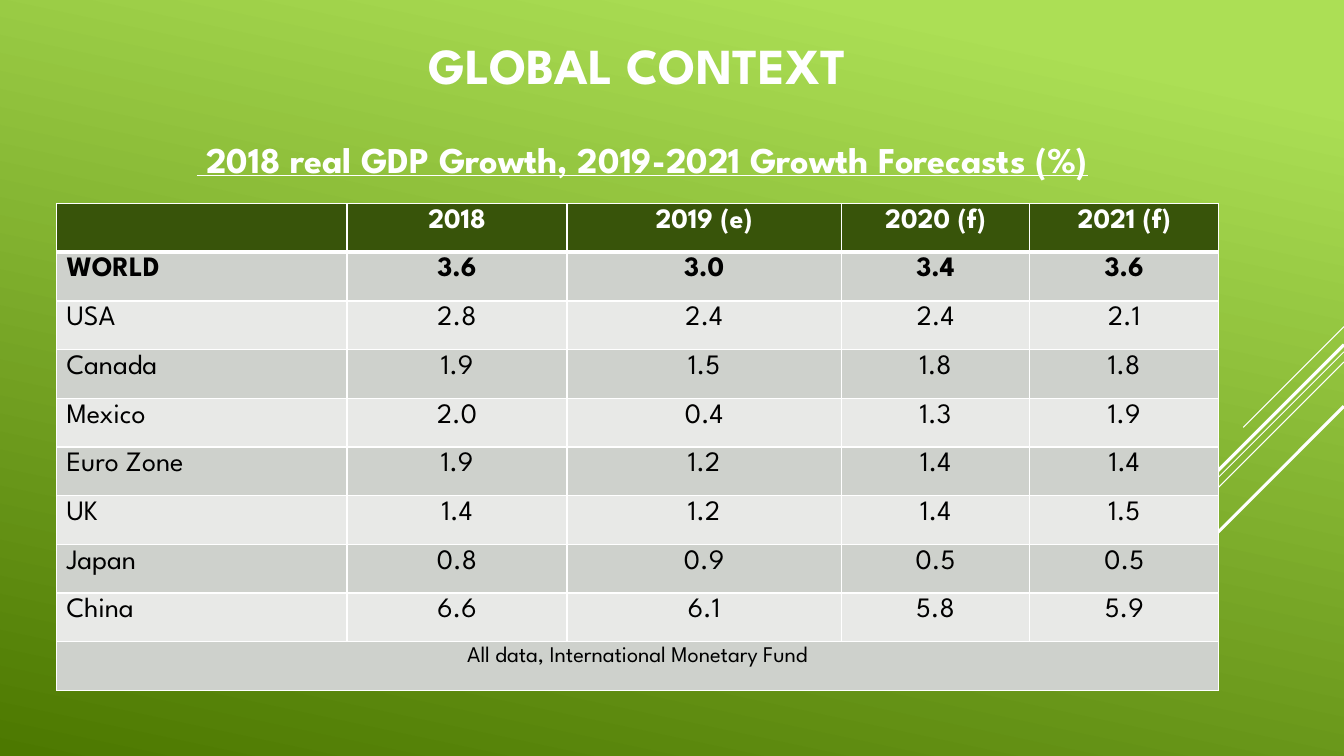
from lxml import etree
from pptx import Presentation
from pptx.dml.color import RGBColor
from pptx.enum import shapes, text
from pptx.oxml import ns
from pptx.util import Pt

WIDTH, HEIGHT = 960, 540
FONT = "League Spartan"
WHITE, BLACK = "FFFFFF", "000000"
HEADER_FILL = "38540A"
BAND_FILLS = ["CED1CC", "E8E9E7"]
GRADIENT = [(0.1, "ACDF55"), (1, "4C7800")]

# text, (left, top, width, height), size, underlined, anchor
HEADINGS = [
    ("GLOBAL CONTEXT", (119.5, 20.2, 671.8, 51.1), 36, False, text.MSO_ANCHOR.BOTTOM),
    (" 2018 real GDP Growth, 2019-2021 Growth Forecasts (%)",
     (18, 92.2, 882, 42.5), 25.9, True, text.MSO_ANCHOR.MIDDLE),
]
# Diagonals falling at 45 degrees from the right edge: start height, run, line width
DIAGONALS = [
    (233.3, 72, 0.75),
    (251.3, 234.7, 0.75),
    (258.5, 149.2, 0.75),
    (246.2, 137.5, 2.25),
    (290.2, 100.1, 2.25),
]
TABLE_LEFT, TABLE_TOP, ROW_HEIGHT = 40.3, 145.4, 34.8
COLUMN_WIDTHS = [207.6, 157.2, 195.8, 134.8, 134.8]
ROWS = [
    ("", "2018", "2019 (e)", "2020 (f)", "2021 (f)"),
    ("WORLD", "3.6", "3.0", "3.4", "3.6"),
    ("USA", "2.8", "2.4", "2.4", "2.1"),
    ("Canada", "1.9", "1.5", "1.8", "1.8"),
    ("Mexico", "2.0", "0.4", "1.3", "1.9"),
    ("Euro Zone", "1.9", "1.2", "1.4", "1.4"),
    ("UK", "1.4", "1.2", "1.4", "1.5"),
    ("Japan", "0.8", "0.9", "0.5", "0.5"),
    ("China", "6.6", "6.1", "5.8", "5.9"),
    ("All data, International Monetary Fund", "", "", "", ""),
]


def color(value):
    return RGBColor.from_string(value)


def write(frame, content, size, font_color, bold, align, underline=False):
    paragraph = frame.paragraphs[0]
    paragraph.alignment = align
    if content:
        run = paragraph.add_run()
        run.text = content
        font = run.font
        font.name, font.size, font.bold = FONT, Pt(size), bold
        font.underline = underline
        font.color.rgb = color(font_color)


def set_borders(cell, widths):
    """Draw white borders; widths are left, right, top, bottom in points."""
    properties = cell._tc.get_or_add_tcPr()
    for index, (side, width) in enumerate(zip("LRTB", widths)):
        line = etree.Element(ns.qn(f"a:ln{side}"), w=str(Pt(width)))
        fill = etree.SubElement(line, ns.qn("a:solidFill"))
        etree.SubElement(fill, ns.qn("a:srgbClr"), val=WHITE)
        properties.insert(index, line)


def add_background(slide):
    fill = slide.background.fill
    fill.gradient()
    fill.gradient_angle = 360 - 102
    for stop, (position, value) in zip(fill.gradient_stops, GRADIENT):
        stop.position = position
        stop.color.rgb = color(value)


def add_diagonals(slide):
    for top, run, width in DIAGONALS:
        line = slide.shapes.add_connector(
            shapes.MSO_CONNECTOR.STRAIGHT,
            Pt(WIDTH), Pt(top), Pt(WIDTH - run), Pt(top + run))
        line.line.color.rgb = color(WHITE)
        line.line.width = Pt(width)
        etree.SubElement(line._element.spPr, ns.qn("a:effectLst"))


def add_headings(slide):
    for content, box, size, underline, anchor in HEADINGS:
        frame = slide.shapes.add_textbox(*map(Pt, box)).text_frame
        frame.word_wrap = True
        frame.vertical_anchor = anchor
        write(frame, content, size, WHITE, True, text.PP_ALIGN.CENTER, underline)


def add_growth_table(slide):
    table = slide.shapes.add_table(
        len(ROWS), len(COLUMN_WIDTHS), Pt(TABLE_LEFT), Pt(TABLE_TOP),
        Pt(sum(COLUMN_WIDTHS)), Pt(ROW_HEIGHT * len(ROWS))).table
    for column, width in zip(table.columns, COLUMN_WIDTHS):
        column.width = Pt(width)
    last = len(ROWS) - 1
    for r, row in enumerate(ROWS):
        table.rows[r].height = Pt(ROW_HEIGHT)
        header = r == 0
        for c, content in enumerate(row):
            cell = table.cell(r, c)
            cell.fill.solid()
            cell.fill.fore_color.rgb = color(HEADER_FILL if header else BAND_FILLS[(r - 1) % 2])
            set_borders(cell, (1, 1, 3 if r == 1 else 1, 3 if header else 1))
            is_label = c == 0 and r < last
            write(cell.text_frame, content, 16 if r == last else 20,
                  WHITE if header else BLACK, r < 2,
                  text.PP_ALIGN.LEFT if is_label else text.PP_ALIGN.CENTER)
    table.cell(last, 0).merge(table.cell(last, len(COLUMN_WIDTHS) - 1))


def main():
    presentation = Presentation()
    presentation.slide_width, presentation.slide_height = Pt(WIDTH), Pt(HEIGHT)
    slide = presentation.slides.add_slide(presentation.slide_layouts[6])
    add_background(slide)
    add_diagonals(slide)
    add_headings(slide)
    add_growth_table(slide)
    presentation.save("out.pptx")


if __name__ == "__main__":
    main()
